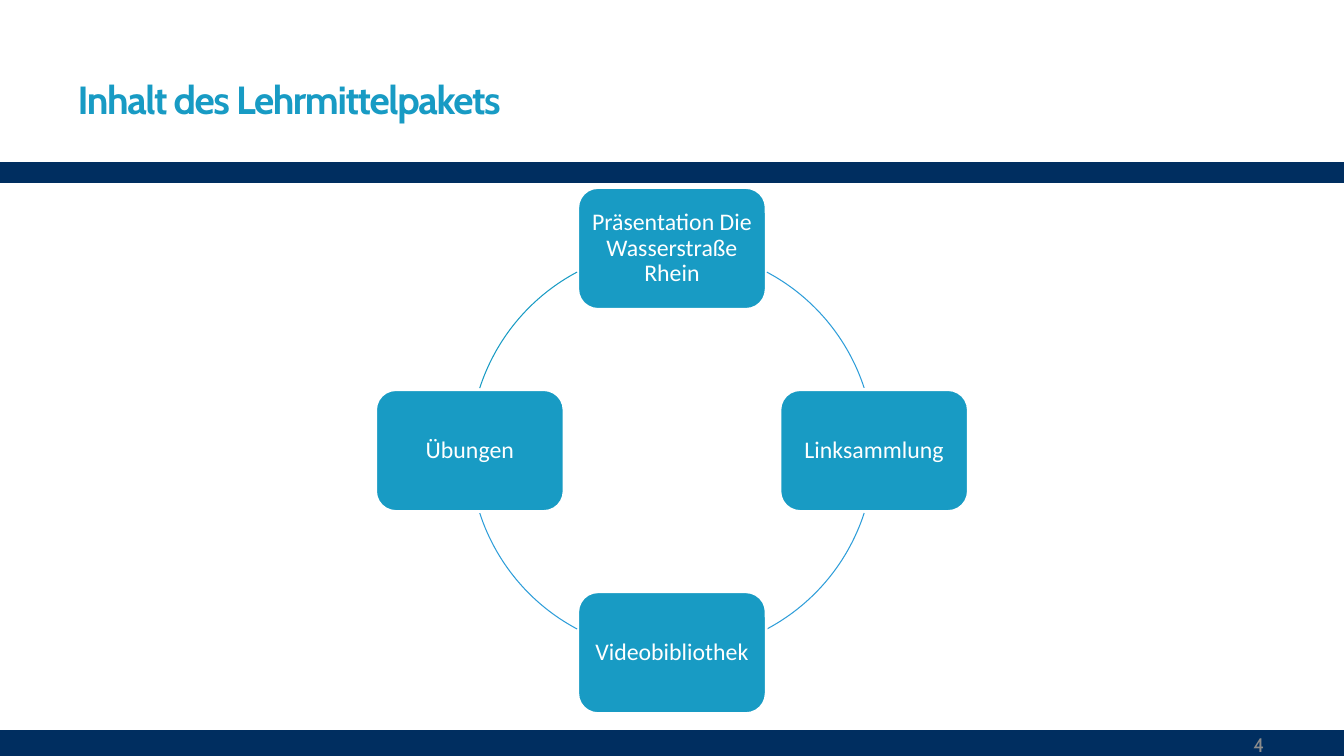
from math import cos, radians, sin

from pptx import Presentation
from pptx.dml.color import RGBColor
from pptx.enum.shapes import MSO_SHAPE
from pptx.enum.text import MSO_ANCHOR, PP_ALIGN
from pptx.util import Inches, Pt

NAVY = RGBColor(0x00, 0x2E, 0x60)
TEAL = RGBColor(0x18, 0x9B, 0xC4)
SKY = RGBColor(0x2D, 0x9D, 0xD9)
GRAY = RGBColor(0x8C, 0x8C, 0x8C)
WHITE = RGBColor(0xFF, 0xFF, 0xFF)

CENTER_X, CENTER_Y, RADIUS = 6.665, 4.47, 2.005
NODE_WIDTH, NODE_HEIGHT = 1.87, 1.21
# Degrees the circle stays hidden around a wide (top, bottom) or side node.
WIDE_GAP, SIDE_GAP = 28, 18
# Topic, angle clockwise from the right, gap before and after the arc, arc color.
TOPICS = [
    ("Präsentation Die Wasserstraße Rhein", -90, WIDE_GAP, SIDE_GAP, SKY),
    ("Linksammlung", 0, SIDE_GAP, WIDE_GAP, SKY),
    ("Videobibliothek", 90, WIDE_GAP, SIDE_GAP, SKY),
    ("Übungen", 180, SIDE_GAP, WIDE_GAP, TEAL),
]


def format_text(text_frame, font_name, size, color, alignment, bold=False):
    text_frame.word_wrap = True
    text_frame.vertical_anchor = MSO_ANCHOR.MIDDLE
    paragraph = text_frame.paragraphs[0]
    paragraph.alignment = alignment
    font = paragraph.runs[0].font
    font.name, font.size, font.bold = font_name, Pt(size), bold
    font.color.rgb = color


def add_filled_shape(slide, kind, left, top, width, height, fill, line):
    shape = slide.shapes.add_shape(kind, Inches(left), Inches(top),
                                   Inches(width), Inches(height))
    shape.shadow.inherit = False
    shape.fill.solid()
    shape.fill.fore_color.rgb = fill
    shape.line.color.rgb = line
    shape.line.width = Pt(2.08)
    return shape


def set_title(slide, text):
    title = slide.shapes.title
    title.left, title.top = Inches(0.67), Inches(0.44)
    title.width, title.height = Inches(6.94), Inches(1.08)
    title.text_frame.text = text
    format_text(title.text_frame, "Cabin", 28, TEAL, PP_ALIGN.LEFT, bold=True)
    run = title.text_frame.paragraphs[0].runs[0]
    run.font._element.set("spc", "-100")


def add_node(slide, text, angle):
    """Place a topic box on the circle at the angle."""
    left = CENTER_X + RADIUS * cos(radians(angle)) - NODE_WIDTH / 2
    top = CENTER_Y + RADIUS * sin(radians(angle)) - NODE_HEIGHT / 2
    node = add_filled_shape(slide, MSO_SHAPE.ROUNDED_RECTANGLE, left, top,
                            NODE_WIDTH, NODE_HEIGHT, TEAL, WHITE)
    text_frame = node.text_frame
    text_frame.text = text
    text_frame.margin_left = text_frame.margin_right = Inches(0.07)
    text_frame.margin_top = text_frame.margin_bottom = Inches(0.07)
    text_frame.paragraphs[0].line_spacing = 0.9
    format_text(text_frame, "Calibri", 17, WHITE, PP_ALIGN.CENTER)


def add_arc(slide, start, end, color):
    """Draw the circle clockwise between two angles in degrees."""
    arc = slide.shapes.add_shape(
        MSO_SHAPE.ARC, Inches(CENTER_X - RADIUS), Inches(CENTER_Y - RADIUS),
        Inches(2 * RADIUS), Inches(2 * RADIUS))
    arc.shadow.inherit = False
    arc.fill.background()
    arc.line.color.rgb = color
    arc.line.width = Pt(0.75)
    # Adjustments count 60000ths of a degree, scaled down by 100000.
    for index, angle in enumerate((start, end)):
        arc.adjustments[index] = angle % 360 * 0.6


def add_page_number(slide, number):
    box = slide.shapes.add_textbox(Inches(11.08), Inches(7.21),
                                   Inches(1.56), Inches(0.36))
    box.text_frame.text = str(number)
    format_text(box.text_frame, "Cabin", 14, GRAY, PP_ALIGN.RIGHT)


def main():
    presentation = Presentation()
    presentation.slide_width = Inches(13.33)
    presentation.slide_height = Inches(7.5)
    slide = presentation.slides.add_slide(presentation.slide_layouts[5])

    for left, top, width, height in ((-0.06, 7.26, 13.54, 0.5),
                                     (0, 1.62, 13.49, 0.18)):
        add_filled_shape(slide, MSO_SHAPE.RECTANGLE, left, top, width, height,
                         NAVY, NAVY)
    set_title(slide, "Inhalt des Lehrmittelpakets")
    for topic, angle, gap_before, gap_after, color in TOPICS:
        add_node(slide, topic, angle)
        add_arc(slide, angle + gap_before, angle + 90 - gap_after, color)
    add_page_number(slide, 4)
    presentation.save("out.pptx")


if __name__ == "__main__":
    main()
